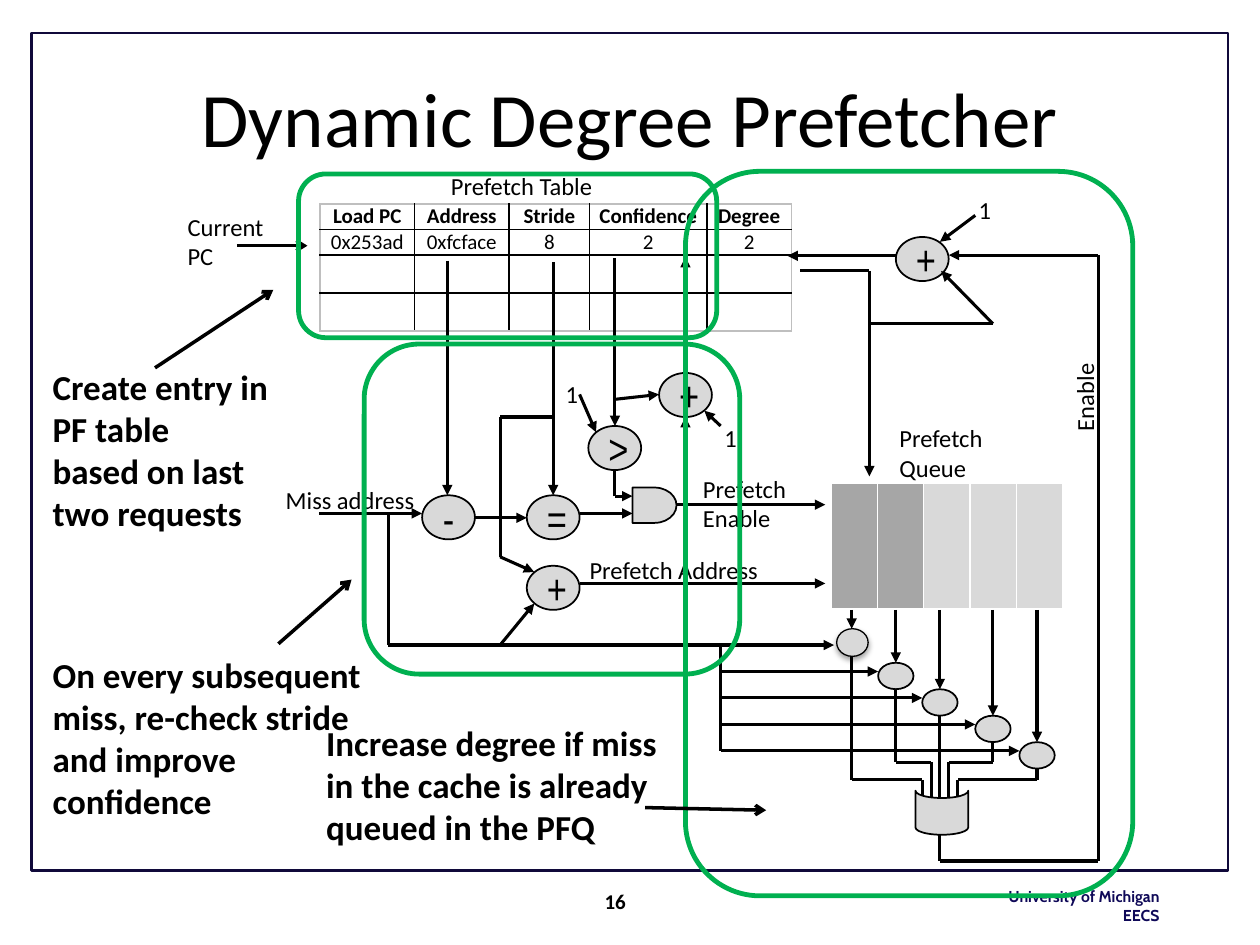
import pptx
import pptx.dml.color
import pptx.enum.shapes
import pptx.enum.text
import pptx.oxml
import pptx.oxml.ns
import pptx.util

Pt = pptx.util.Pt
SHAPE = pptx.enum.shapes.MSO_SHAPE
ALIGN = pptx.enum.text.PP_ALIGN
ANCHOR = pptx.enum.text.MSO_ANCHOR
NAMESPACE = pptx.oxml.ns.nsdecls("a")

COLORS = {
    "ink": "000000", "frame": "10093A", "school": "0F0958", "gate": "D9D9D9",
    "used": "A6A6A6", "edge": "BFBFBF", "white": "FFFFFF", "region": "00B050",
}
LABEL = {"name": "Calibri", "size": Pt(14), "bold": False}
NOTE = {"name": "Calibri", "size": Pt(20), "bold": True}
SYMBOL = {"name": "Arial Narrow", "size": Pt(24), "bold": False}
CELL = {"name": "Calibri", "size": Pt(12), "bold": False}


def rgb(name):
    return pptx.dml.color.RGBColor.from_string(COLORS[name])


class Diagram:
    """Holds the drawing style and the slide that receives the elements."""

    def __init__(self, slide, wire_width=1.75):
        self.slide = slide
        self.wire_width = wire_width

    def set_lines(self, frame, lines, font, color="ink", align=ALIGN.LEFT):
        for index, line in enumerate(lines):
            paragraph = frame.paragraphs[0] if index == 0 else frame.add_paragraph()
            paragraph.alignment = align
            run = paragraph.add_run()
            run.text = line
            for key, value in font.items():
                setattr(run.font, key, value)
            run.font.color.rgb = rgb(color)

    def text(self, lines, box, font=LABEL, color="ink", align=ALIGN.LEFT,
             anchor=ANCHOR.TOP, rotation=0, wrap=True):
        shape = self.slide.shapes.add_textbox(*map(Pt, box))
        shape.rotation = rotation
        shape.text_frame.word_wrap = wrap
        shape.text_frame.vertical_anchor = anchor
        self.set_lines(shape.text_frame, lines, font, color, align)

    def shape(self, kind, box, fill="gate", line="ink", width=1, symbol=None, rotation=0):
        shape = self.slide.shapes.add_shape(kind, *map(Pt, box))
        shape.shadow.inherit = False
        shape.rotation = rotation
        if fill:
            shape.fill.solid()
            shape.fill.fore_color.rgb = rgb(fill)
        else:
            shape.fill.background()
        shape.line.color.rgb = rgb(line)
        shape.line.width = Pt(width)
        if symbol:
            shape.text_frame.vertical_anchor = ANCHOR.MIDDLE
            self.set_lines(shape.text_frame, [symbol], SYMBOL, align=ALIGN.CENTER)
        return shape

    def wire(self, *points, head=None, width=None):
        """Draw straight segments through the points, with a head at the last one."""
        for start, end in zip(points, points[1:]):
            connector = self.slide.shapes.add_connector(
                pptx.enum.shapes.MSO_CONNECTOR.STRAIGHT, *map(Pt, start + end))
            connector.line.color.rgb = rgb("ink")
            connector.line.width = Pt(width or self.wire_width)
            properties = connector._element.spPr
            properties.append(pptx.oxml.parse_xml(f"<a:effectLst {NAMESPACE}/>"))
        if head:
            connector.line._get_or_add_ln().append(
                pptx.oxml.parse_xml(f'<a:tailEnd {NAMESPACE} type="{head}"/>'))

    def arrow(self, *points):
        self.wire(*points, head="triangle")

    def soft_shadow(self, shape):
        effects = shape._element.spPr.find(pptx.oxml.ns.qn("a:effectLst"))
        effects.append(pptx.oxml.parse_xml(
            f'<a:outerShdw {NAMESPACE} blurRad="{Pt(3.1)}" dist="{Pt(1.8)}" dir="5400000" '
            'rotWithShape="0"><a:srgbClr val="000000"><a:alpha val="35000"/></a:srgbClr>'
            '</a:outerShdw>'))

    def table(self, left, top, widths, heights, rows, fills, inner, outer):
        """Fill a plain table; inner and outer name the border colours."""
        box = map(Pt, (left, top, sum(widths), sum(heights)))
        table = self.slide.shapes.add_table(len(heights), len(widths), *box).table
        table.first_row = table.horz_banding = False
        for column, width in zip(table.columns, widths):
            column.width = Pt(width)
        for row, height in zip(table.rows, heights):
            row.height = Pt(height)
        for r in range(len(heights)):
            for c in range(len(widths)):
                cell = table.cell(r, c)
                cell.margin_left = cell.margin_right = cell.margin_top = cell.margin_bottom = 0
                font = dict(CELL, bold=r == 0)
                self.set_lines(cell.text_frame, [rows[r][c]], font, align=ALIGN.CENTER)
                sides = {"lnL": c == 0, "lnR": c == len(widths) - 1,
                         "lnT": r == 0, "lnB": r == len(heights) - 1}
                for side, is_outer in sides.items():
                    color = COLORS[outer if is_outer else inner]
                    cell._tc.get_or_add_tcPr().append(pptx.oxml.parse_xml(
                        f'<a:{side} {NAMESPACE} w="{Pt(1)}"><a:solidFill>'
                        f'<a:srgbClr val="{color}"/></a:solidFill></a:{side}>'))
                if fills:
                    cell.fill.solid()
                    cell.fill.fore_color.rgb = rgb(fills[c])
                else:
                    cell.fill.background()


def draw_frame(diagram):
    diagram.text(["University of Michigan", "EECS"], (558, 503.3, 111.6, 28.8),
                 {"name": "Cabin", "size": Pt(9), "bold": True}, "school", ALIGN.RIGHT, wrap=False)
    diagram.shape(SHAPE.RECTANGLE, (18, 18.7, 684, 478.8), None, "frame", 1.25)
    diagram.text(["Dynamic Degree Prefetcher"], (36, 21.6, 648, 90),
                 dict(LABEL, size=Pt(44)), align=ALIGN.CENTER, anchor=ANCHOR.MIDDLE)
    diagram.text(["16"], (338.4, 500.4, 345.6, 28.8), dict(CELL, bold=True), anchor=ANCHOR.MIDDLE)


def draw_tables(diagram):
    blank = [""] * 5
    diagram.table(182.9, 116.6, (54, 54, 46.1, 67, 48.2), (14.6, 14.6, 19.5, 19.5),
                  [["Load PC", "Address", "Stride", "Confidence", "Degree"],
                   ["0x253ad", "0xfcface", "8", "2", "2"], blank, blank],
                  None, "ink", "edge")
    diagram.table(474.9, 276, [26.5] * 5, [72], [blank],
                  ["used"] * 2 + ["gate"] * 3, "white", "white")


def draw_stride_check(diagram):
    diagram.wire((135.4, 140.4), (175.7, 140.4), head="arrow")
    for points in (
        [(255.6, 149), (255.6, 283)], [(270.7, 295.9), (301, 295.9)],
        [(316.1, 149.8), (316.1, 283)], [(285.8, 318.2), (305.3, 326.9)],
        [(285.8, 368.6), (305.3, 344.9)], [(331.2, 293.4), (361.4, 293.4)],
        [(351.4, 283.5), (361.4, 283.5)], [(391.7, 288.7), (391.7, 238.3)],
        [(331.2, 333.4), (471.6, 333.4)], [(391.7, 213.1), (391.7, 146.9)],
        [(386.6, 288.4), (471.6, 288.4)], [(351.4, 147.6), (351.4, 243.4)],
        [(182.2, 293.4), (241.2, 293.4)], [(331.2, 225.4), (340.6, 247)],
        [(411.8, 243.4), (402.5, 234.7)], [(351.4, 228.2), (376.6, 225.4)],
    ):
        diagram.arrow(*points)
    diagram.wire((316.1, 238.3), (285.8, 238.3), (285.8, 318.2))
    diagram.wire((221.8, 293.4), (221.8, 368.6), (411.8, 368.6))
    diagram.wire((351.4, 283.7), (351.4, 268.6))
    for symbol, left, top in (("-", 241.2, 283), ("=", 301, 283), ("+", 301, 323.3),
                              ("+", 376.6, 213.1), (">", 336.2, 243.4), ("+", 511.9, 135.4)):
        diagram.shape(SHAPE.OVAL, (left, top, 30.2, 25.2), symbol=symbol)
    diagram.shape(SHAPE.FLOWCHART_DELAY, (361.4, 278.6, 25.2, 20.2))


def draw_degree_control(diagram):
    diagram.arrow((457.2, 154.8), (496.8, 154.8), (496.8, 272.2))
    diagram.arrow((496.8, 185), (567.4, 185), (537.8, 154.8))
    diagram.arrow((511.9, 146.2), (450, 146.2))
    diagram.arrow((557.3, 123.1), (537.1, 138.2))
    diagram.arrow((537.1, 476.6), (537.1, 492), (627.5, 492), (627.5, 145.8), (542.2, 145.8))

    step = 15.12
    bus = 411.8
    taps = (486.7, 511.9, 537.1, 567.4, 592.6)
    gate_inputs = (527, 532.1, 537.1, 542.2, 547.2)
    turns = (445.7, 435.6, 435.6, 435.6, 445.7)
    ends = (455.8, 455.8, 466.6, 465.8, 455.8)
    diagram.wire((bus, 368.6), (bus, 368.6 + 4 * step))
    for index, (tap, gate_input, turn, end) in enumerate(zip(taps, gate_inputs, turns, ends)):
        top = 363.6 + index * step
        level = 368.6 + index * step
        box = (tap - 10.1, top, 20.2, step)
        if index == 0:
            top = 359.3
            box = (478.1, top, 18, 15.8)
        diagram.arrow((tap, 348.5), (tap, top))
        diagram.arrow((bus, level), (tap - 10.1, level))
        route = [(tap, top + step), (tap, turn), (gate_input, turn), (gate_input, end)]
        diagram.wire(*(route if tap != gate_input else (route[0], route[-1])))
        comparator = diagram.shape(SHAPE.OVAL, box, width=1 if index else 0.75)
        if index == 0:
            diagram.soft_shadow(comparator)
    diagram.shape(SHAPE.FLOWCHART_STORED_DATA, (525.6, 449.3, 25.2, 30.2), rotation=270)


def draw_labels(diagram):
    for lines, box in (
        (["Current PC"], (100.1, 117.4, 70.6, 41)),
        (["Miss address"], (156.2, 273.6, 110.2, 24.5)),
        (["Prefetch Queue"], (506.9, 238.3, 90.7, 41)),
        (["Prefetch Table"], (250.6, 94.3, 110.2, 24.5)),
        (["Prefetch Address"], (329.8, 313.9, 131, 24.5)),
        (["Prefetch", "Enable"], (394.6, 267.1, 115.2, 41)),
        (["1"], (552.2, 108, 20.2, 24.5)),
        (["1"], (316.1, 213.1, 15.1, 24.5)),
        (["1"], (406.8, 238.3, 15.1, 24.5)),
    ):
        diagram.text(lines, box)
    diagram.text(["Enable"], (555.1, 176.4, 129.6, 24.5), rotation=270)


def draw_regions(diagram):
    for lines, note, region, start, end in (
        (["On every subsequent", "miss, re-check stride", "and improve confidence"],
         (23, 370.1, 206, 80), (208.1, 196.6, 214.6, 188.6), (159.1, 367.9), (200.9, 331.2)),
        (["Create entry in PF table", "based on last two requests"],
         (23, 205.2, 148.3, 104.4), (170.6, 99.4, 239, 93.6), (88.6, 210.2), (156.2, 165.6)),
        (["Increase degree if miss", "in the cache is already queued in the PFQ"],
         (179.3, 409, 229, 80), (391.7, 97.9, 255.6, 414), (368.6, 461.5), (437.8, 463)),
    ):
        diagram.text(lines, note, NOTE)
        diagram.shape(SHAPE.ROUNDED_RECTANGLE, region, None, "region", 2.75)
        diagram.wire(start, end, head="arrow", width=2)


def main():
    presentation = pptx.Presentation()
    presentation.slide_width = Pt(720)
    presentation.slide_height = Pt(540)
    diagram = Diagram(presentation.slides.add_slide(presentation.slide_layouts[6]))
    for draw in (draw_frame, draw_tables, draw_stride_check, draw_degree_control,
                 draw_labels, draw_regions):
        draw(diagram)
    presentation.save("out.pptx")


if __name__ == "__main__":
    main()
